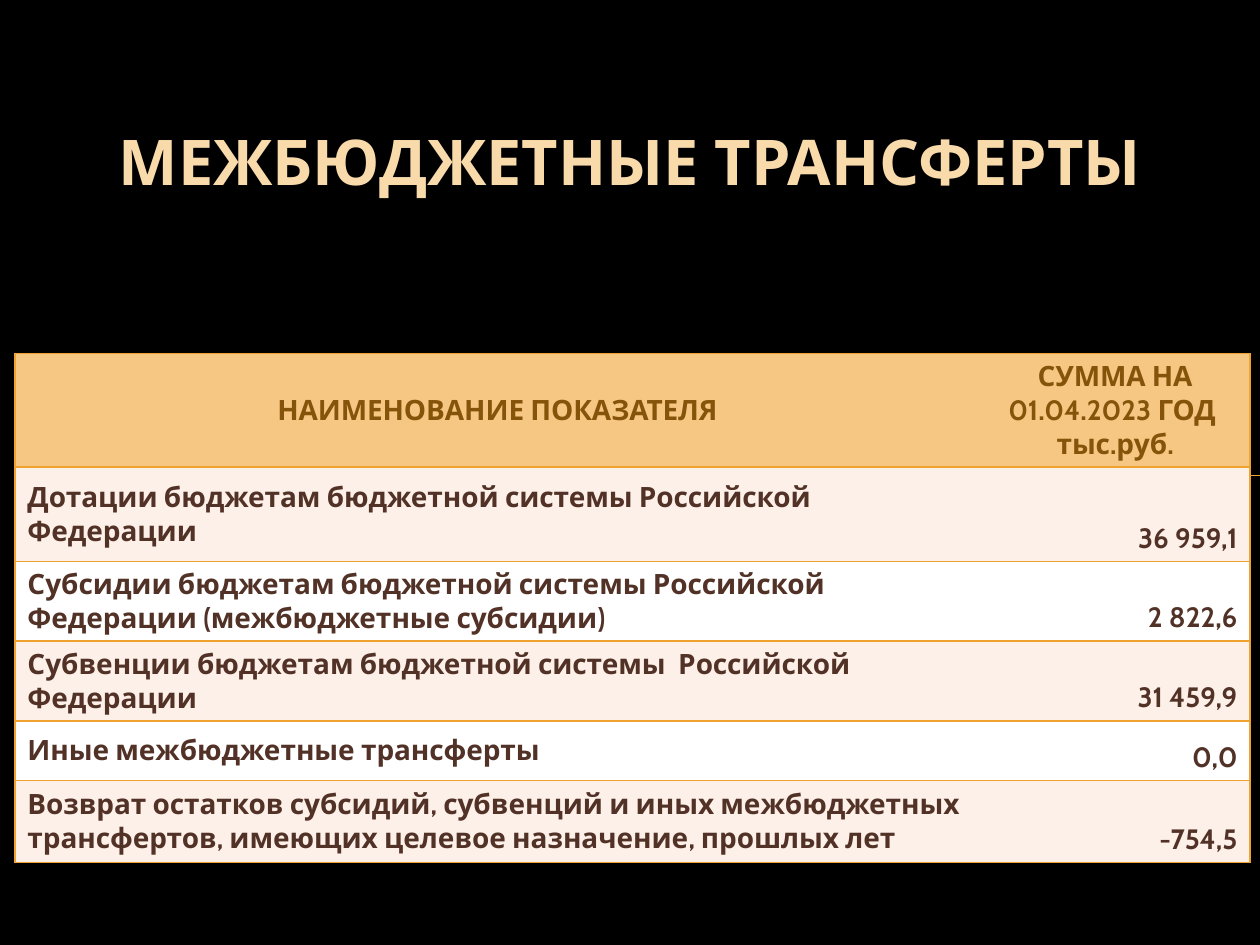
from dataclasses import dataclass

from lxml import etree
from pptx import Presentation, util as u
from pptx.dml.color import RGBColor
from pptx.enum import shapes, text
from pptx.oxml.ns import qn

GOLD = "F0A22E"
LEFT, CENTER, RIGHT = text.PP_ALIGN.LEFT, text.PP_ALIGN.CENTER, text.PP_ALIGN.RIGHT
TOP, MIDDLE, BOTTOM = text.MSO_ANCHOR.TOP, text.MSO_ANCHOR.MIDDLE, text.MSO_ANCHOR.BOTTOM


def color(hex_string):
    return RGBColor.from_string(hex_string)


def write(frame, content, font="Cabin", size=16, ink="523227", align=LEFT, anchor=MIDDLE):
    """Fill a text frame; every line of the content becomes a paragraph."""
    frame.word_wrap = True
    frame.vertical_anchor = anchor
    for i, line in enumerate(content.split("\n")):
        paragraph = frame.paragraphs[0] if i == 0 else frame.add_paragraph()
        paragraph.alignment = align
        run = paragraph.add_run()
        run.text = line
        run.font.name, run.font.size, run.font.bold = font, u.Pt(size), True
        run.font.color.rgb = color(ink)


@dataclass
class SlideStyle:
    slide: object
    accent: str = GOLD

    def background(self, hex_string):
        fill = self.slide.background.fill
        fill.solid()
        fill.fore_color.rgb = color(hex_string)

    def rule(self, x1, x2, y):
        line = self.slide.shapes.add_connector(
            shapes.MSO_CONNECTOR.STRAIGHT, u.Cm(x1), u.Cm(y), u.Cm(x2), u.Cm(y))
        line.line.color.rgb = color(self.accent)
        line.line.width = u.Pt(0.75)
        etree.SubElement(line._element.spPr, qn("a:effectLst"))

    def textbox(self, x, y, width, height, content, **fmt):
        box = self.slide.shapes.add_textbox(u.Cm(x), u.Cm(y), u.Cm(width), u.Cm(height))
        write(box.text_frame, content, **fmt)

    def borders(self, cell, visible):
        properties = cell._tc.get_or_add_tcPr()
        for side in "LRTB":
            line = etree.SubElement(properties, qn(f"a:ln{side}"), w=str(u.Pt(1)))
            if side in visible:
                fill = etree.SubElement(line, qn("a:solidFill"))
                etree.SubElement(fill, qn("a:srgbClr"), val=self.accent)
            else:
                etree.SubElement(line, qn("a:noFill"))

    def cell(self, cell, content, fill, visible, **fmt):
        self.borders(cell, visible)
        cell.fill.solid()
        cell.fill.fore_color.rgb = color(fill)
        write(cell.text_frame, content, **fmt)
        cell.vertical_anchor = fmt.get("anchor", MIDDLE)

    def table(self, x, y, widths, heights):
        table = self.slide.shapes.add_table(
            len(heights), len(widths), u.Cm(x), u.Cm(y),
            u.Cm(sum(widths)), u.Cm(sum(heights))).table
        table.first_row = table.horz_banding = False
        for column, width in zip(table.columns, widths):
            column.width = u.Cm(width)
        for row, height in zip(table.rows, heights):
            row.height = u.Cm(height)
        return table


HEADINGS = ("НАИМЕНОВАНИЕ ПОКАЗАТЕЛЯ", "СУММА НА 01.04.2023 ГОД \nтыс.руб.")
TRANSFERS = [
    ("Дотации бюджетам бюджетной системы Российской Федерации", "36 959,1"),
    ("Субсидии бюджетам бюджетной системы Российской Федерации "
     "(межбюджетные субсидии)", "2 822,6"),
    ("Субвенции бюджетам бюджетной системы  Российской Федерации", "31 459,9"),
    ("Иные межбюджетные трансферты", "0,0"),
    ("Возврат остатков субсидий, субвенций и иных межбюджетных трансфертов, "
     "имеющих целевое назначение, прошлых лет", "-754,5"),
]


def main():
    deck = Presentation()
    deck.slide_width, deck.slide_height = u.Cm(25.4), u.Cm(19.05)
    page = SlideStyle(deck.slides.add_slide(deck.slide_layouts[6]))

    # Backdrop and title
    page.background("000000")
    page.rule(1.42, 25.4, 9.58)
    page.textbox(0, 2.34, 25.4, 5, "МЕЖБЮДЖЕТНЫЕ ТРАНСФЕРТЫ", font="Karla", size=36,
                 ink="F9DAAB", align=CENTER, anchor=TOP)

    # Table heading
    transfers = page.table(0.3, 7.13, (19.46, 5.44), (1.65, 1.9, 1.6, 1.6, 1.2, 1.65))
    edges = ("LTB", "RTB")
    for column, heading in enumerate(HEADINGS):
        page.cell(transfers.cell(0, column), heading, "F6C782", edges[column],
                  ink="85540A", align=CENTER)

    # Transfers, on alternating bands
    for row, (label, amount) in enumerate(TRANSFERS, start=1):
        band = "FCF0E8" if row % 2 else "FFFFFF"
        page.cell(transfers.cell(row, 0), label, band, edges[0])
        page.cell(transfers.cell(row, 1), amount, band, edges[1],
                  align=RIGHT, anchor=BOTTOM)

    deck.save("out.pptx")


if __name__ == "__main__":
    main()
